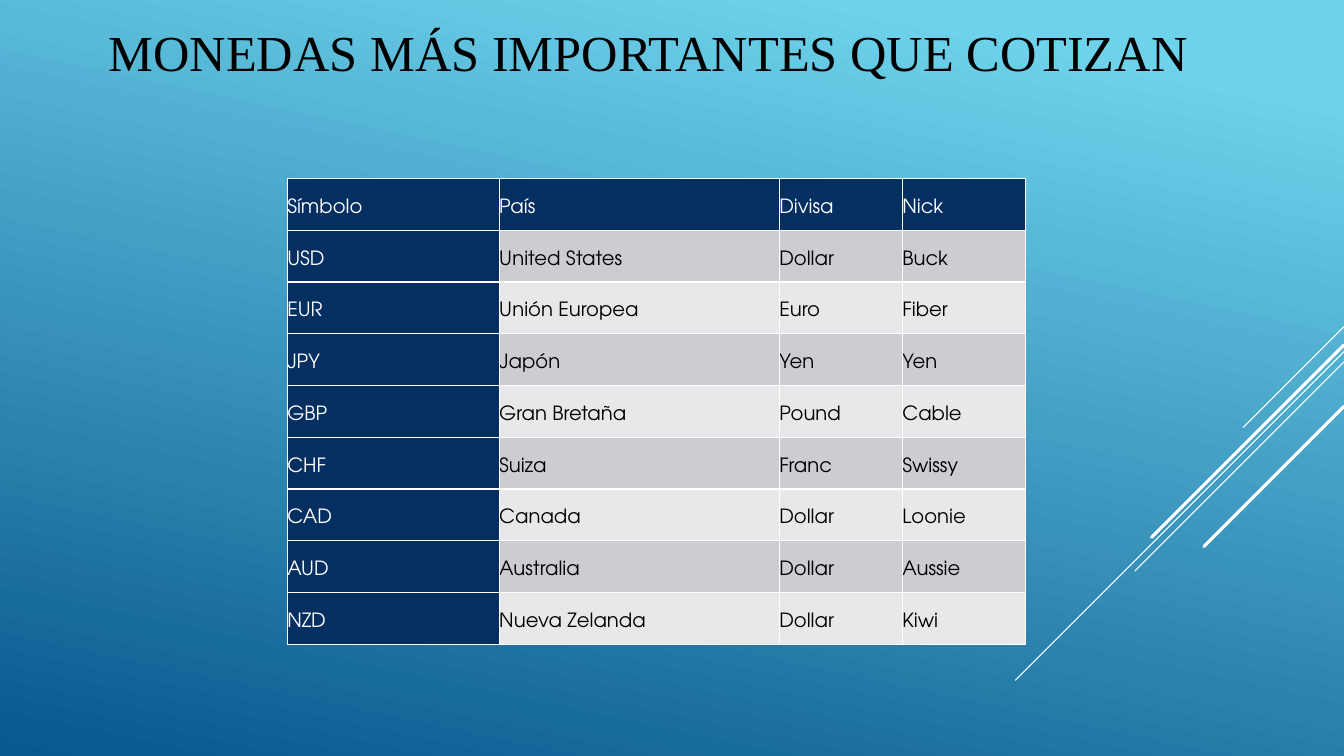
from dataclasses import dataclass

import pptx
import pptx.dml.color
import pptx.enum.shapes
import pptx.enum.text
import pptx.oxml
import pptx.oxml.ns
import pptx.util
from lxml import etree

Cm = pptx.util.Cm
Pt = pptx.util.Pt

COLORS = {
    "sky": "6ED2EB",
    "deep": "06588E",
    "navy": "052F61",
    "band_dark": "CCCDD2",
    "band_light": "E7E8EA",
    "white": "FFFFFF",
    "black": "000000",
}
TITLE_FONT = "Times New Roman"
TABLE_FONT = "TeX Gyre Adventor"
SLIDE_WIDTH, SLIDE_HEIGHT = 33.87, 19.05
COLUMN_WIDTHS = [5.34, 7.06, 3.1, 3.1]
TABLE_LEFT, TABLE_TOP, TABLE_HEIGHT = 7.24, 4.5, 11.74


@dataclass
class Ray:
    """A 45-degree line running down and left from the right edge, in cm."""
    top: float
    run: float
    weight: float


@dataclass
class Currency:
    symbol: str
    country: str
    unit: str
    nick: str

    def texts(self) -> list[str]:
        return [self.symbol, self.country, self.unit, self.nick]


RAYS = [
    Ray(8.23, 2.54, 0.75),
    Ray(8.86, 8.28, 0.75),
    Ray(9.12, 5.27, 0.75),
    Ray(8.69, 4.85, 2.25),
    Ray(10.24, 3.53, 2.25),
]
CURRENCIES = [
    Currency("Símbolo", "País", "Divisa", "Nick"),
    Currency("USD", "United States", "Dollar", "Buck"),
    Currency("EUR", "Unión Europea", "Euro", "Fiber"),
    Currency("JPY", "Japón", "Yen", "Yen"),
    Currency("GBP", "Gran Bretaña", "Pound", "Cable"),
    Currency("CHF", "Suiza", "Franc", "Swissy"),
    Currency("CAD", "Canada", "Dollar", "Loonie"),
    Currency("AUD", "Australia", "Dollar", "Aussie"),
    Currency("NZD", "Nueva Zelanda", "Dollar", "Kiwi"),
]


def rgb(name: str) -> pptx.dml.color.RGBColor:
    return pptx.dml.color.RGBColor.from_string(COLORS[name])


def add_run(paragraph, text: str, font: str, size: float, color: str) -> None:
    run = paragraph.add_run()
    run.text = text
    run.font.name = font
    run.font.size = Pt(size)
    run.font.color.rgb = rgb(color)


def paint_background(slide) -> None:
    fill = slide.background.fill
    fill.gradient()
    fill.gradient_angle = 258
    for stop, position, color in zip(fill.gradient_stops, (0.1, 1), ("sky", "deep")):
        stop.position = position
        stop.color.rgb = rgb(color)


def draw_ray(slide, ray: Ray) -> None:
    line = slide.shapes.add_connector(
        pptx.enum.shapes.MSO_CONNECTOR.STRAIGHT,
        Cm(SLIDE_WIDTH), Cm(ray.top),
        Cm(SLIDE_WIDTH - ray.run), Cm(ray.top + ray.run))
    line.line.color.rgb = rgb("white")
    line.line.width = Pt(ray.weight)
    properties = line._element.spPr
    properties.find(pptx.oxml.ns.qn("a:ln")).set("cap", "rnd")
    etree.SubElement(properties, pptx.oxml.ns.qn("a:effectLst"))


def draw_title(slide, text: str) -> None:
    title = slide.shapes.add_textbox(Cm(2.49), Cm(0), Cm(28.78), Cm(2.57))
    frame = title.text_frame
    frame.word_wrap = True
    frame.vertical_anchor = pptx.enum.text.MSO_ANCHOR.MIDDLE
    add_run(frame.paragraphs[0], text, TITLE_FONT, 36, "black")


def add_borders(cell) -> None:
    properties = cell._tc.get_or_add_tcPr()
    for side in ("lnL", "lnR", "lnT", "lnB"):
        border = etree.SubElement(
            properties, pptx.oxml.ns.qn(f"a:{side}"), w=str(Pt(1)))
        fill = etree.SubElement(border, pptx.oxml.ns.qn("a:solidFill"))
        etree.SubElement(fill, pptx.oxml.ns.qn("a:srgbClr"), val=COLORS["white"])


def fill_cell(cell, text: str, background: str, color: str) -> None:
    add_borders(cell)
    cell.fill.solid()
    cell.fill.fore_color.rgb = rgb(background)
    cell.margin_left = cell.margin_right = cell.margin_top = cell.margin_bottom = 0
    cell.vertical_anchor = pptx.enum.text.MSO_ANCHOR.MIDDLE
    paragraph = cell.text_frame.paragraphs[0]
    paragraph.line_spacing = Pt(18)
    paragraph.space_after = Pt(10)
    add_run(paragraph, text, TABLE_FONT, 14, color)


def draw_currencies(slide, currencies: list[Currency]) -> None:
    table = slide.shapes.add_table(
        len(currencies), len(COLUMN_WIDTHS), Cm(TABLE_LEFT), Cm(TABLE_TOP),
        Cm(sum(COLUMN_WIDTHS)), Cm(TABLE_HEIGHT)).table
    table.horz_banding = False
    table.first_col = True
    for column, width in zip(table.columns, COLUMN_WIDTHS):
        column.width = Cm(width)
    for r, currency in enumerate(currencies):
        band = "band_dark" if r % 2 else "band_light"
        for c, text in enumerate(currency.texts()):
            heading = r == 0 or c == 0
            fill_cell(table.cell(r, c), text,
                      "navy" if heading else band,
                      "white" if heading else "black")
            # Headings keep the regular weight
            table.cell(r, c).text_frame.paragraphs[0].runs[0].font.bold = False


def main() -> None:
    deck = pptx.Presentation()
    deck.slide_width = Cm(SLIDE_WIDTH)
    deck.slide_height = Cm(SLIDE_HEIGHT)
    slide = deck.slides.add_slide(deck.slide_layouts[6])

    # Backdrop
    paint_background(slide)
    for ray in RAYS:
        draw_ray(slide, ray)

    # Content
    draw_title(slide, "MONEDAS MÁS IMPORTANTES QUE COTIZAN")
    draw_currencies(slide, CURRENCIES)

    deck.save("out.pptx")


if __name__ == "__main__":
    main()
